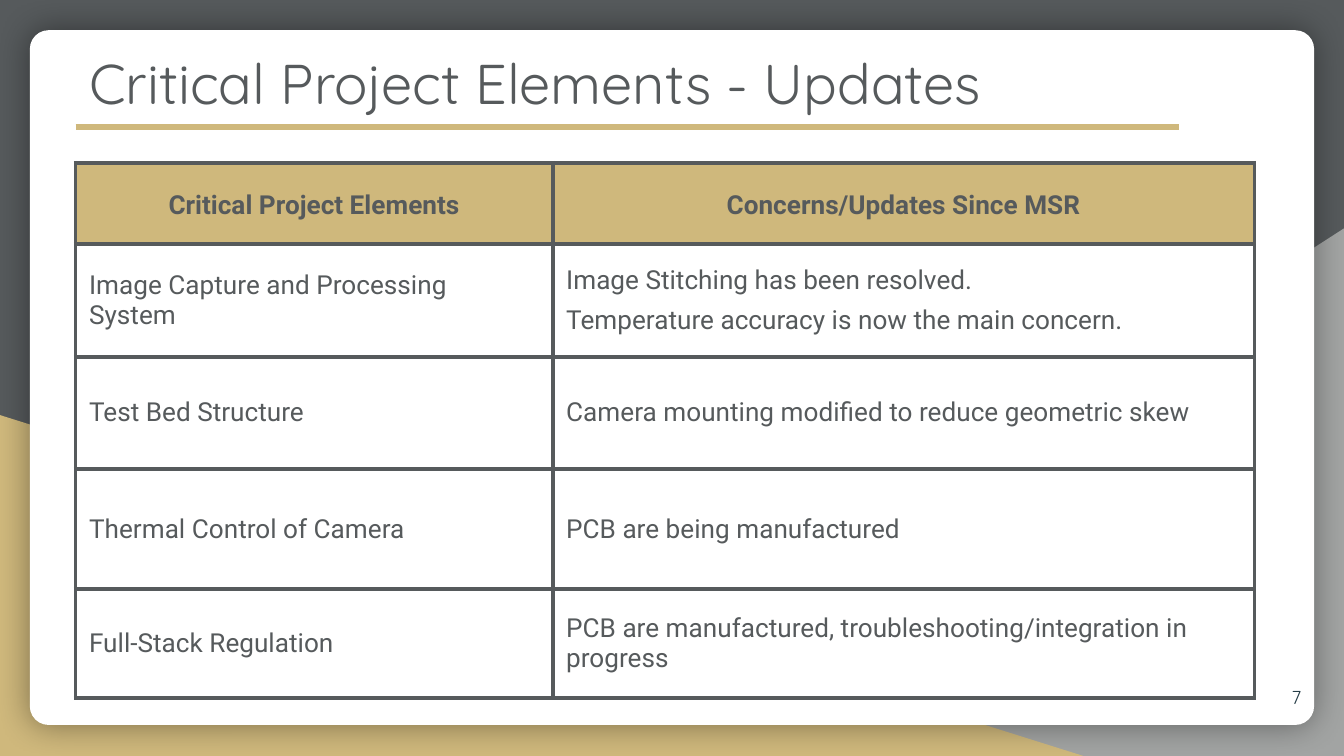
from dataclasses import dataclass

from lxml import etree
from pptx import Presentation
from pptx.dml.color import RGBColor
from pptx.enum import shapes, text
from pptx.oxml import ns
from pptx.util import Pt

SLATE = RGBColor(0x56, 0x5A, 0x5C)
GOLD = RGBColor(0xCF, 0xB8, 0x7C)
GRAY = RGBColor(0xA2, 0xA4, 0xA3)
WHITE = RGBColor(0xFF, 0xFF, 0xFF)
NAVY = RGBColor(0x23, 0x3A, 0x44)

HEADING_FONT = "Quicksand"
BODY_FONT = "Roboto"
INSET = Pt(7.2)
MARGIN = 40.5
RULE_TOP = 68.2
CONTENT_WIDTH = 591


@dataclass(frozen=True)
class Box:
    left: float
    top: float
    width: float
    height: float

    def lengths(self) -> tuple:
        return tuple(Pt(v) for v in (self.left, self.top, self.width, self.height))


@dataclass(frozen=True)
class Panel:
    kind: shapes.MSO_SHAPE
    box: Box
    color: RGBColor
    flipped: bool = False


@dataclass(frozen=True)
class Row:
    height: float
    element: str
    updates: tuple
    header: bool = False


TRIANGLE = shapes.MSO_SHAPE.RIGHT_TRIANGLE
PANELS = (
    Panel(TRIANGLE, Box(282, 122.4, 438, 282.6), GRAY, flipped=True),
    Panel(TRIANGLE, Box(0, 222.4, 580.4, 182.6), GOLD),
)
CARD = Panel(shapes.MSO_SHAPE.ROUNDED_RECTANGLE, Box(16, 16.2, 688, 372.2), WHITE)

COLUMN_WIDTHS = (255.6, 375.9)
ROWS = (
    Row(43.6, "Critical Project Elements", ("Concerns/Updates Since MSR",), header=True),
    Row(60.5, "Image Capture and Processing System",
        ("Image Stitching has been resolved.",
         "Temperature accuracy is now the main concern.")),
    Row(60, "Test Bed Structure", ("Camera mounting modified to reduce geometric skew",)),
    Row(64.4, "Thermal Control of Camera", ("PCB are being manufactured",)),
    Row(58.2, "Full-Stack Regulation",
        ("PCB are manufactured, troubleshooting/integration in progress",)),
)


def add_panel(page, panel: Panel):
    shape = page.shapes.add_shape(panel.kind, *panel.box.lengths())
    shape.shadow.inherit = False
    shape.fill.solid()
    shape.fill.fore_color.rgb = panel.color
    shape.line.fill.background()
    if panel.flipped:
        shape._element.spPr.xfrm.set("flipH", "1")
    return shape


def add_glow(shape) -> None:
    """Give the shape a soft dark shadow on all sides."""
    effects = shape._element.spPr.find(ns.qn("a:effectLst"))
    shadow = etree.SubElement(effects, ns.qn("a:outerShdw"), blurRad=str(Pt(18)),
                              dist="0", dir="0", algn="ctr", rotWithShape="0")
    color = etree.SubElement(shadow, ns.qn("a:srgbClr"), val="000000")
    etree.SubElement(color, ns.qn("a:alpha"), val="40000")


def add_span(para, words: str, font: str, size: float, color: RGBColor,
             bold: bool = False) -> None:
    span = para.add_run()
    span.text = words
    span.font.name = font
    span.font.size = Pt(size)
    span.font.color.rgb = color
    span.font.bold = bold


def set_frame(frame, anchor: text.MSO_ANCHOR) -> None:
    frame.word_wrap = True
    frame.auto_size = text.MSO_AUTO_SIZE.NONE
    frame.vertical_anchor = anchor
    frame.margin_left = frame.margin_right = INSET
    frame.margin_top = frame.margin_bottom = INSET


def set_borders(cell, color: RGBColor, width: float) -> None:
    properties = cell._tc.get_or_add_tcPr()
    for index, side in enumerate(("lnL", "lnR", "lnT", "lnB")):
        line = etree.Element(ns.qn(f"a:{side}"), w=str(Pt(width)))
        fill = etree.SubElement(line, ns.qn("a:solidFill"))
        etree.SubElement(fill, ns.qn("a:srgbClr"), val=str(color))
        properties.insert(index, line)


def fill_cell(cell, lines: tuple, header: bool) -> None:
    cell.vertical_anchor = text.MSO_ANCHOR.MIDDLE
    cell.margin_left = cell.margin_right = INSET
    cell.margin_top = cell.margin_bottom = INSET
    if header:
        cell.fill.solid()
        cell.fill.fore_color.rgb = GOLD
    else:
        cell.fill.background()
    set_borders(cell, SLATE, 2.25)
    for index, words in enumerate(lines):
        para = cell.text_frame.add_paragraph() if index else cell.text_frame.paragraphs[0]
        if index:
            para.space_before = Pt(5)
        if index == len(lines) - 1:
            para.space_after = Pt(5)
        if header:
            para.alignment = text.PP_ALIGN.CENTER
            para.line_spacing = 1.14
        add_span(para, words, BODY_FONT, 14, SLATE, bold=header)


def add_updates_table(page) -> None:
    box = Box(MARGIN, 87.2, sum(COLUMN_WIDTHS), sum(row.height for row in ROWS))
    table = page.shapes.add_table(len(ROWS), len(COLUMN_WIDTHS), *box.lengths()).table
    table.first_row = table.horz_banding = False
    for column, width in zip(table.columns, COLUMN_WIDTHS):
        column.width = Pt(width)
    for index, row in enumerate(ROWS):
        table.rows[index].height = Pt(row.height)
        fill_cell(table.cell(index, 0), (row.element,), row.header)
        fill_cell(table.cell(index, 1), row.updates, row.header)


def main() -> None:
    deck = Presentation()
    deck.slide_width, deck.slide_height = Pt(720), Pt(405)
    page = deck.slides.add_slide(deck.slide_layouts[5])

    # Background, corner triangles and white card
    page.background.fill.solid()
    page.background.fill.fore_color.rgb = SLATE
    for panel in PANELS:
        add_panel(page, panel)
    card = add_panel(page, CARD)
    card.adjustments[0] = 0.027
    add_glow(card)

    # Rule under the title
    rule = page.shapes.add_connector(shapes.MSO_CONNECTOR.STRAIGHT, Pt(MARGIN), Pt(RULE_TOP),
                                     Pt(MARGIN + CONTENT_WIDTH), Pt(RULE_TOP))
    rule.line.color.rgb = GOLD
    rule.line.width = Pt(3)
    etree.SubElement(rule._element.spPr, ns.qn("a:effectLst"))

    # Title, brought in front of the card
    title = page.shapes.title
    title.left, title.top, title.width, title.height = Box(
        MARGIN, 18.7, CONTENT_WIDTH, 49.5).lengths()
    set_frame(title.text_frame, text.MSO_ANCHOR.TOP)
    para = title.text_frame.paragraphs[0]
    para.alignment = text.PP_ALIGN.LEFT
    add_span(para, "Critical Project Elements - Updates", HEADING_FONT, 30, SLATE)
    page.shapes._spTree.append(title._element)

    # Page number
    number = page.shapes.add_textbox(*Box(661, 358, 43.2, 31).lengths())
    set_frame(number.text_frame, text.MSO_ANCHOR.MIDDLE)
    para = number.text_frame.paragraphs[0]
    para.alignment = text.PP_ALIGN.RIGHT
    add_span(para, "7", HEADING_FONT, 10, NAVY)

    add_updates_table(page)
    deck.save("out.pptx")


if __name__ == "__main__":
    main()
